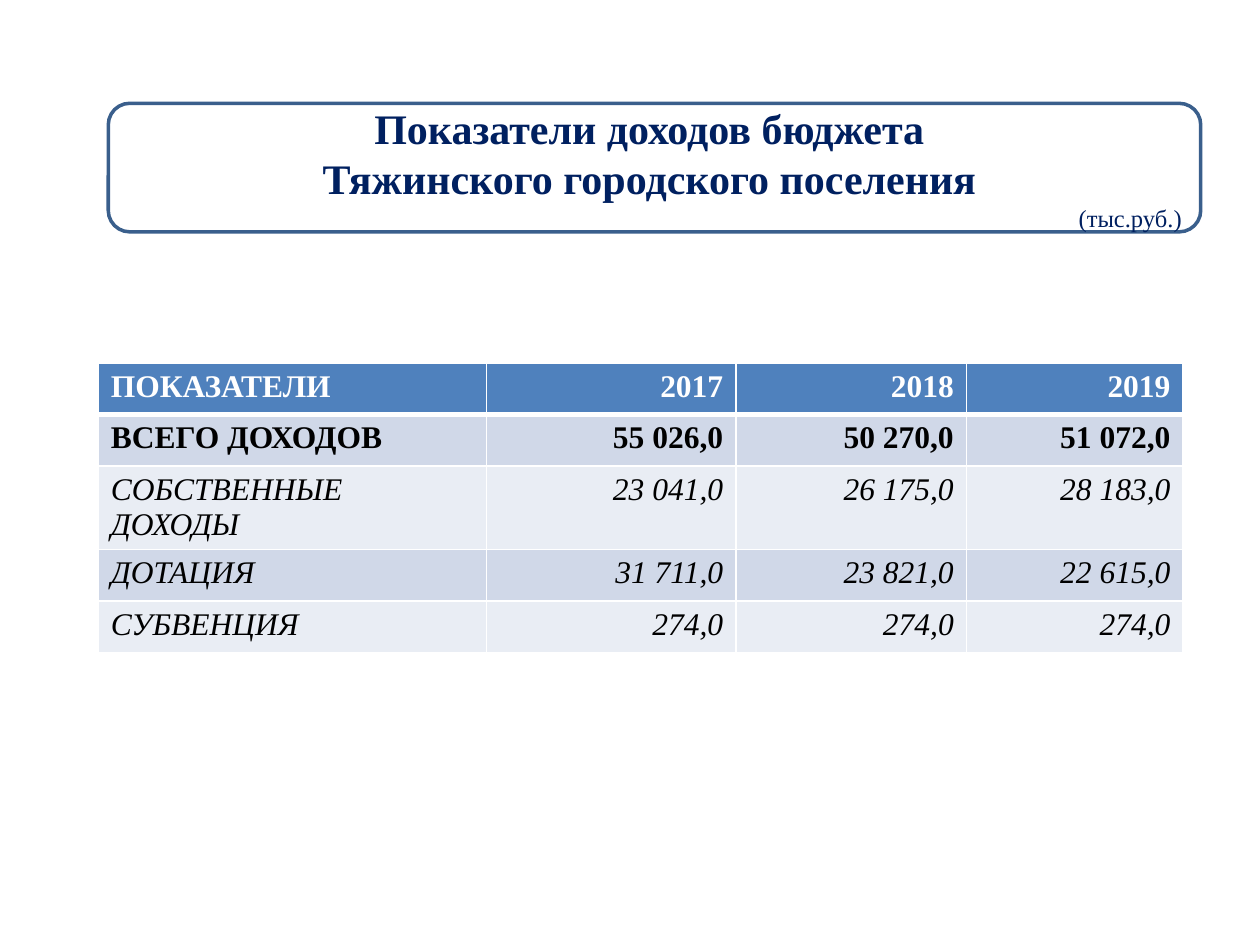
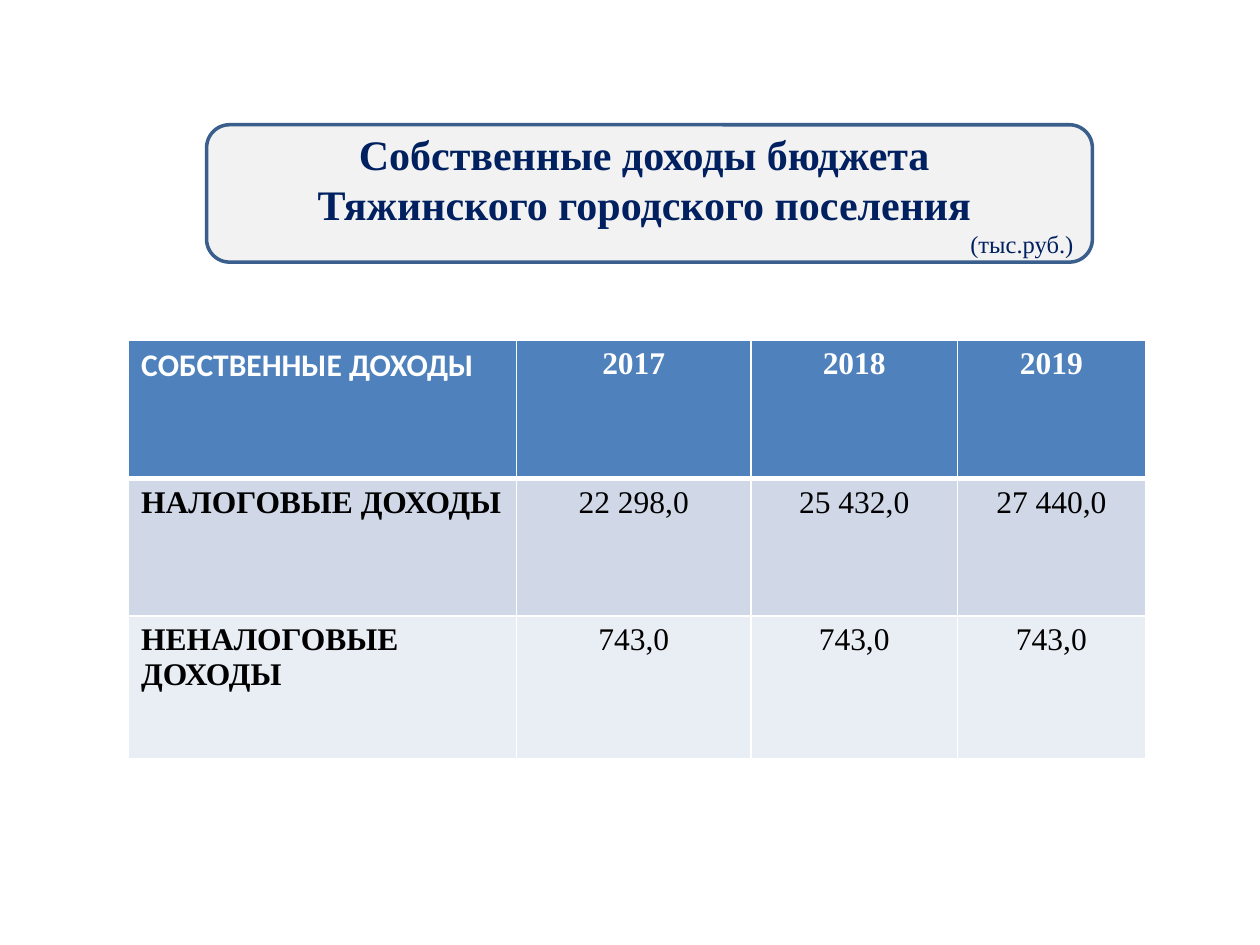
from dataclasses import dataclass

from lxml.etree import SubElement
from pptx import Presentation
from pptx.dml.color import RGBColor
from pptx.enum.shapes import MSO_SHAPE
from pptx.enum.text import MSO_ANCHOR, MSO_AUTO_SIZE, PP_ALIGN
from pptx.oxml.ns import qn
from pptx.util import Inches, Pt


@dataclass(frozen=True)
class Theme:
    serif: str = "Times New Roman"
    sans: str = "Calibri"
    title_size: int = 24
    unit_size: int = 14
    table_size: int = 18
    title_color: str = "002060"
    frame_line: str = "3A5F8C"
    header_fill: str = "4F81BD"
    band_fills: tuple[str, str] = ("D0D8E8", "E9EDF4")
    white: str = "FFFFFF"
    black: str = "000000"
    grid_width: int = 1
    header_rule_width: int = 3


@dataclass(frozen=True)
class TextStyle:
    bold: bool = False
    italic: bool = False
    font: str = Theme.serif
    size: int = Theme.table_size
    color: str = Theme.black


@dataclass(frozen=True)
class TitleFrame:
    first_line: str
    area: tuple[float, float, float, float]
    fill: str


@dataclass(frozen=True)
class TableRow:
    texts: tuple[str, ...]
    height: float
    label_style: TextStyle
    value_style: TextStyle


@dataclass(frozen=True)
class BudgetTable:
    left: float
    top: float
    column_widths: tuple[float, ...]
    value_alignment: PP_ALIGN
    rows: tuple[TableRow, ...]


@dataclass(frozen=True)
class BudgetPage:
    title: TitleFrame
    table: BudgetTable


THEME = Theme()
TITLE_SECOND_LINE = "Тяжинского городского поселения "
UNIT_NOTE = "(тыс.руб.)"

TITLE = TextStyle(bold=True, size=THEME.title_size, color=THEME.title_color)
UNIT = TextStyle(size=THEME.unit_size, color=THEME.title_color)
HEADER = TextStyle(bold=True, color=THEME.white)
SANS_HEADER = TextStyle(bold=True, color=THEME.white, font=THEME.sans)
PLAIN = TextStyle()
BOLD = TextStyle(bold=True)
ITALIC = TextStyle(italic=True)

PAGES = (
    BudgetPage(
        TitleFrame("Показатели доходов бюджета ", (0.86, 0.82, 8.67, 1.02), THEME.white),
        BudgetTable(0.78, 2.88, (3.08, 1.98, 1.83, 1.72), PP_ALIGN.RIGHT, (
            TableRow(("ПОКАЗАТЕЛИ", "2017", "2018", "2019"), 0.41, HEADER, HEADER),
            TableRow(("ВСЕГО ДОХОДОВ", "55 026,0", "50 270,0", "51 072,0"), 0.41, BOLD, BOLD),
            TableRow(("СОБСТВЕННЫЕ ДОХОДЫ", "23 041,0", "26 175,0", "28 183,0"), 0.66, ITALIC, ITALIC),
            TableRow(("ДОТАЦИЯ", "31 711,0", "23 821,0", "22 615,0"), 0.41, ITALIC, ITALIC),
            TableRow(("СУБВЕНЦИЯ", "274,0", "274,0", "274,0"), 0.41, ITALIC, ITALIC),
        )),
    ),
    BudgetPage(
        TitleFrame("Собственные доходы бюджета ", (1.64, 0.99, 7.03, 1.09), "F2F2F2"),
        BudgetTable(1.02, 2.7, (3.08, 1.86, 1.64, 1.49), PP_ALIGN.CENTER, (
            TableRow(("СОБСТВЕННЫЕ ДОХОДЫ", "2017", "2018", "2019"), 1.1, SANS_HEADER, HEADER),
            TableRow(("НАЛОГОВЫЕ ДОХОДЫ", "22 298,0", "25 432,0", "27 440,0"), 1.09, BOLD, PLAIN),
            TableRow(("НЕНАЛОГОВЫЕ ДОХОДЫ", "743,0", "743,0", "743,0"), 1.13, BOLD, PLAIN),
        )),
    ),
)


def write(para, text: str, style: TextStyle, alignment: PP_ALIGN) -> None:
    para.text = text
    para.alignment = alignment
    for span in para.runs:
        span.font.name = style.font
        span.font.size = Pt(style.size)
        span.font.bold = style.bold
        span.font.italic = style.italic
        span.font.color.rgb = RGBColor.from_string(style.color)


def add_title(page, title: TitleFrame) -> None:
    """Draw the rounded frame and lay the title placeholder over it."""
    left, top, width, height = map(Inches, title.area)
    frame = page.shapes.add_shape(MSO_SHAPE.ROUNDED_RECTANGLE, left, top, width, height)
    frame.shadow.inherit = False
    frame.fill.solid()
    frame.fill.fore_color.rgb = RGBColor.from_string(title.fill)
    frame.line.color.rgb = RGBColor.from_string(THEME.frame_line)
    frame.line.width = Pt(2)

    box = page.shapes.title
    box.left, box.top, box.width, box.height = left, top, width, height
    frame.element.addnext(box.element)
    text_frame = box.text_frame
    text_frame.word_wrap = True
    text_frame.auto_size = MSO_AUTO_SIZE.NONE
    text_frame.vertical_anchor = MSO_ANCHOR.MIDDLE
    text_frame.margin_left = text_frame.margin_right = Inches(0.15)
    write(text_frame.paragraphs[0], title.first_line, TITLE, PP_ALIGN.CENTER)
    write(text_frame.add_paragraph(), TITLE_SECOND_LINE, TITLE, PP_ALIGN.CENTER)
    write(text_frame.add_paragraph(), UNIT_NOTE, UNIT, PP_ALIGN.RIGHT)


def set_borders(cell, row_index: int) -> None:
    """Give the cell white borders, with a thicker rule under the header row."""
    thick_side = {0: "lnB", 1: "lnT"}.get(row_index)
    properties = cell._tc.get_or_add_tcPr()
    for side in ("lnL", "lnR", "lnT", "lnB"):
        width = THEME.header_rule_width if side == thick_side else THEME.grid_width
        line = SubElement(properties, qn(f"a:{side}"), w=str(Pt(width)))
        fill = SubElement(line, qn("a:solidFill"))
        SubElement(fill, qn("a:srgbClr"), val=THEME.white)


def add_budget_table(page, spec_table: BudgetTable) -> None:
    rows, widths = spec_table.rows, spec_table.column_widths
    table = page.shapes.add_table(
        len(rows), len(widths), Inches(spec_table.left), Inches(spec_table.top),
        Inches(sum(widths)), Inches(sum(row.height for row in rows)),
    ).table
    for column, width in zip(table.columns, widths):
        column.width = Inches(width)
    for row_index, row in enumerate(rows):
        table.rows[row_index].height = Inches(row.height)
        fill = THEME.band_fills[(row_index - 1) % 2] if row_index else THEME.header_fill
        for column_index, text in enumerate(row.texts):
            cell = table.cell(row_index, column_index)
            set_borders(cell, row_index)
            cell.fill.solid()
            cell.fill.fore_color.rgb = RGBColor.from_string(fill)
            is_label = column_index == 0
            write(
                cell.text_frame.paragraphs[0], text,
                row.label_style if is_label else row.value_style,
                PP_ALIGN.LEFT if is_label else spec_table.value_alignment,
            )


def main() -> None:
    deck = Presentation()
    deck.slide_width, deck.slide_height = Inches(10), Inches(7.5)
    title_only = deck.slide_layouts[5]
    for content in PAGES:
        page = deck.slides.add_slide(title_only)
        add_title(page, content.title)
        add_budget_table(page, content.table)
    deck.save("out.pptx")


if __name__ == "__main__":
    main()
